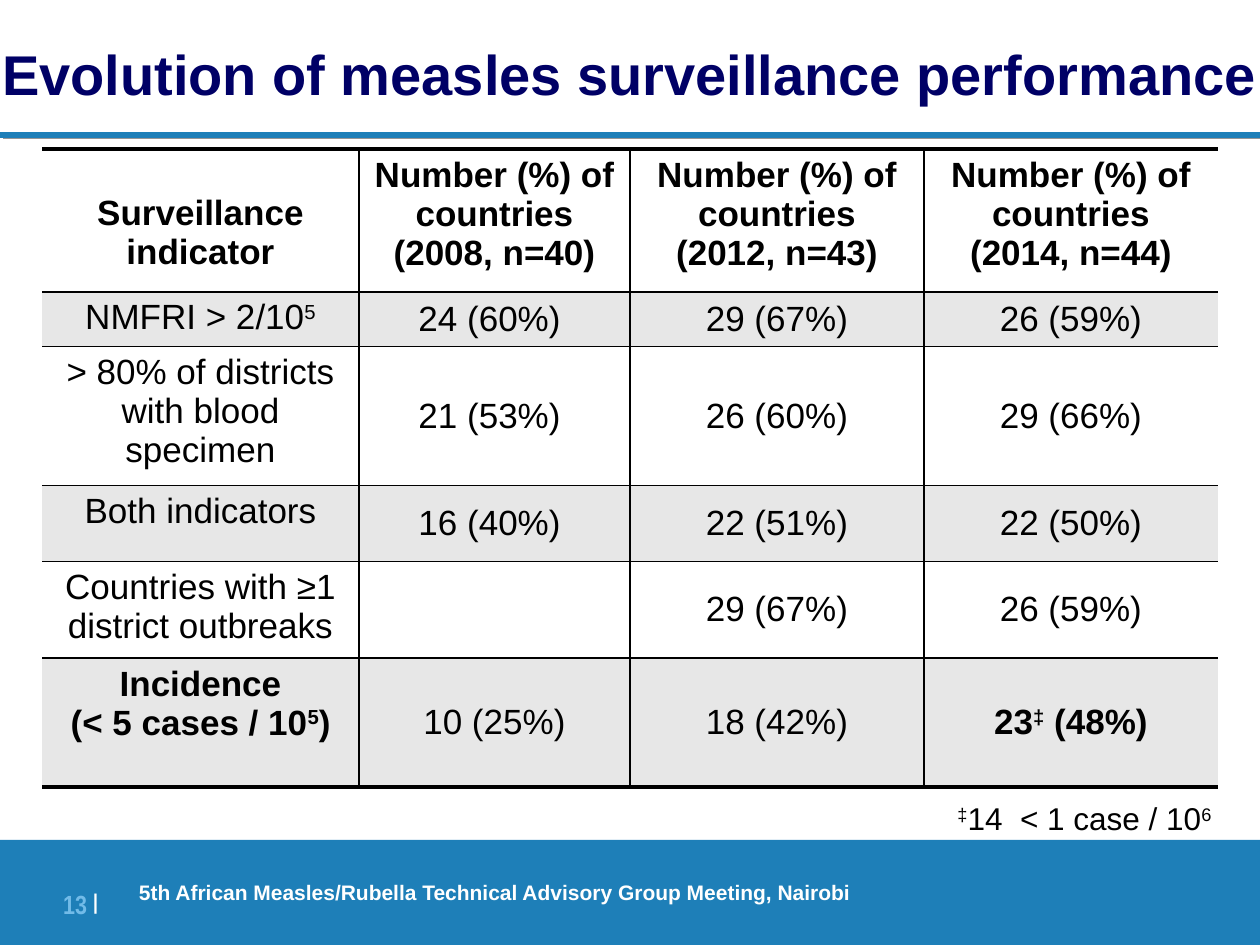
from lxml import etree
from pptx import Presentation
from pptx.dml.color import RGBColor
from pptx.enum.shapes import MSO_CONNECTOR, MSO_SHAPE
from pptx.enum.text import MSO_ANCHOR, PP_ALIGN
from pptx.oxml import parse_xml
from pptx.oxml.ns import nsdecls, qn
from pptx.util import Pt

CENTER, RIGHT, LEFT = PP_ALIGN.CENTER, PP_ALIGN.RIGHT, PP_ALIGN.LEFT
MIDDLE, TOP = MSO_ANCHOR.MIDDLE, MSO_ANCHOR.TOP
PX = 914400 / 126
COLORS = {name: RGBColor.from_string(value) for name, value in {
    "blue": "1E7FB8", "sky": "72BBE8", "navy": "000066",
    "black": "000000", "white": "FFFFFF", "band": "E7E7E7"}.items()}
SHADOW = ('<a:effectLst %s><a:outerShdw dist="%d" dir="%d" algn="ctr">'
          '<a:srgbClr val="%s"/></a:outerShdw></a:effectLst>')


def px(*values):
    return [round(v * PX) for v in values]


def write(p, text, size, color="black", bold=False, align=CENTER, face="Arial"):
    """Fill a paragraph; parts between ^ marks are superscript."""
    p.alignment = align
    p.font.size, p.font.bold, p.font.name = Pt(size), bold, face
    p.font.color.rgb = COLORS[color]
    for i, part in enumerate(text.split("^")):
        if part:
            r = p.add_run()
            r.text = part
            r.font.size, r.font.bold, r.font.name = Pt(size), bold, face
            r.font.color.rgb = COLORS[color]
            if i % 2:
                r._r.get_or_add_rPr().set("baseline", "30000")


prs = Presentation()
prs.slide_width, prs.slide_height = px(1260, 945)
s = prs.slides.add_slide(prs.slide_layouts[6])

# Rule under the title
rule = s.shapes.add_connector(MSO_CONNECTOR.STRAIGHT, *px(0, 135, 1260, 135))
rule.line.color.rgb = COLORS["blue"]
rule.line.width = Pt(3)
rule._element.spPr.append(
    parse_xml(SHADOW % (nsdecls("a"), 28000, 1620000, "969696")))

# Footer band
band = s.shapes.add_shape(MSO_SHAPE.RECTANGLE, *px(0, 840, 1260, 105))
band.shadow.inherit = False
band.fill.solid()
band.fill.fore_color.rgb = COLORS["blue"]
band.line.fill.background()
tf = band.text_frame
tf.vertical_anchor = MIDDLE
tf.margin_left = px(139)[0]
write(tf.paragraphs[0],
      "5th African Measles/Rubella Technical Advisory Group Meeting, Nairobi",
      12, "white", True, LEFT)

# Slide number
tf = s.shapes.add_textbox(*px(49, 878, 49, 45)).text_frame
tf.margin_left = tf.margin_top = tf.margin_right = tf.margin_bottom = 0
p = tf.paragraphs[0]
write(p, "13 ", 15, "sky", True, RIGHT, "Arial Narrow")
r = p.add_run()
r.text = "|"
r.font.size, r.font.bold, r.font.name = Pt(21), True, "Arial Narrow"
r.font.color.rgb = COLORS["white"]
r._r.get_or_add_rPr().set("baseline", "14000")

# Title with a light text shadow
tf = s.shapes.add_textbox(*px(0, 0, 1260, 147)).text_frame
tf.margin_left = tf.margin_top = tf.margin_right = tf.margin_bottom = 0
tf.vertical_anchor = MIDDLE
tf.word_wrap = True
p = tf.paragraphs[0]
write(p, "Evolution of measles surveillance performance", 32, "navy", True)
p.runs[0]._r.rPr.find(qn("a:solidFill")).addnext(
    parse_xml(SHADOW % (nsdecls("a"), 25400, 2700000, "72BBE8")))

# Surveillance table
ROWS = [
    ["Surveillance indicator"] + [
        f"Number (%) of countries\n({year}, n={n})"
        for year, n in ((2008, 40), (2012, 43), (2014, 44))],
    ["NMFRI > 2/10^5^", "24 (60%) ", "29 (67%)", "26 (59%)"],
    ["> 80% of districts with blood specimen", "21 (53%) ", "26 (60%)", "29 (66%)"],
    ["Both indicators", "16 (40%) ", "22 (51%)", "22 (50%)"],
    ["Countries with ≥1 district outbreaks", "", "29 (67%)", "26 (59%)"],
    ["Incidence\n(< 5 cases / 10^5^)", "10 (25%)", "18 (42%)", "23^‡^ (48%)"],
]
WIDTHS = px(317, 271, 294, 294)
HEIGHTS = px(143, 51, 130, 76, 91, 129)
last_row, last_col = len(ROWS) - 1, len(WIDTHS) - 1
table = s.shapes.add_table(len(ROWS), len(WIDTHS), *px(42, 149),
                           sum(WIDTHS), sum(HEIGHTS)).table
for column, width in zip(table.columns, WIDTHS):
    column.width = width
for i, (row, height) in enumerate(zip(ROWS, HEIGHTS)):
    table.rows[i].height = height
    for j, text in enumerate(row):
        cell = table.cell(i, j)
        cell.vertical_anchor = MIDDLE if i and j else TOP
        cell.fill.solid()
        cell.fill.fore_color.rgb = COLORS["band" if i % 2 else "white"]
        bold = i == 0 or (i == last_row and j in (0, last_col))
        for k, line in enumerate(text.split("\n")):
            tf = cell.text_frame
            p = tf.add_paragraph() if k else tf.paragraphs[0]
            write(p, line, 20, bold=bold)
        # Open sides, thin inner lines, thick top and bottom
        borders = (("L", 1 if j else 0), ("R", 1 if j < last_col else 0),
                   ("T", 1 if i else 2), ("B", 1 if i < last_row else 2))
        for n, (side, width) in enumerate(borders):
            ln = etree.Element(qn(f"a:ln{side}"), w=str(Pt(width)))
            if width:
                fill = etree.SubElement(ln, qn("a:solidFill"))
                etree.SubElement(fill, qn("a:srgbClr"), val=str(COLORS["black"]))
            else:
                etree.SubElement(ln, qn("a:noFill"))
            cell._tc.get_or_add_tcPr().insert(n, ln)
# The first heading starts one line lower
table.cell(0, 0).margin_top = px(45)[0]

# Footnote
tf = s.shapes.add_textbox(*px(945, 793, 297, 48)).text_frame
tf.word_wrap = True
write(tf.paragraphs[0], "^‡^14  < 1 case / 10^6^", 18, align=LEFT)

prs.save("out.pptx")
